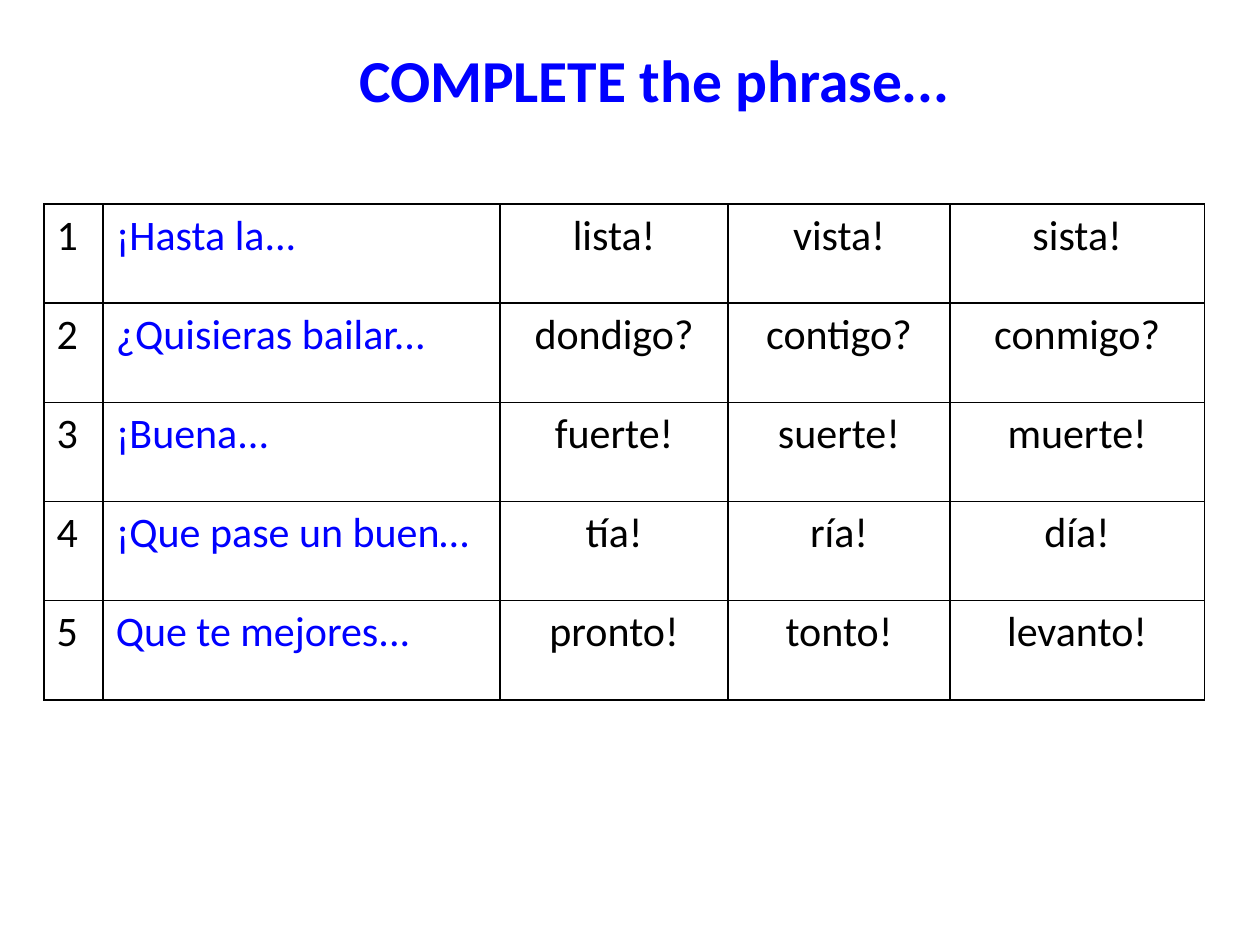
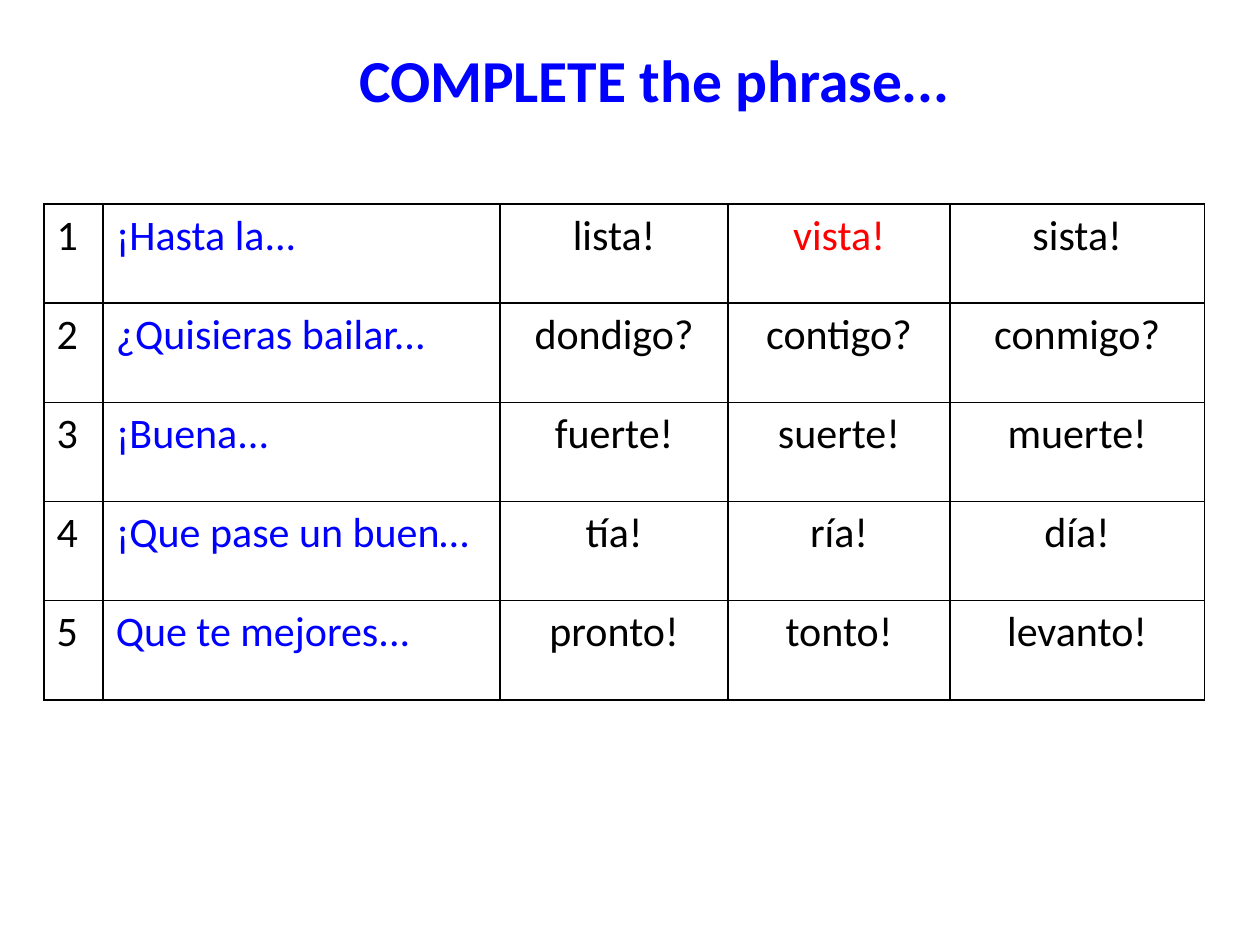
from lxml.etree import SubElement
from pptx import Presentation
from pptx.dml.color import RGBColor
from pptx.enum.text import MSO_ANCHOR, PP_ALIGN
from pptx.oxml.ns import qn
from pptx.util import Cm, Pt

PHRASES = [
    ("¡Hasta la...", "lista!", "vista!", "sista!"),
    ("¿Quisieras bailar...", "dondigo?", "contigo?", "conmigo?"),
    ("¡Buena...", "fuerte!", "suerte!", "muerte!"),
    ("¡Que pase un buen…", "tía!", "ría!", "día!"),
    ("Que te mejores...", "pronto!", "tonto!", "levanto!"),
]
COLUMN_WIDTHS = [1.19, 8, 4.6, 4.47, 5.13]
ROW_HEIGHT = 2


def color(value):
    return RGBColor.from_string(value)


class PhraseDeck:
    font = "Calibri"
    blue, black, red, white = "0000FF", "000000", "FF0000", "FFFFFF"

    def __init__(self):
        self.presentation = Presentation()
        self.presentation.slide_width = Cm(25.4)
        self.presentation.slide_height = Cm(19.05)
        self.slide = None

    def add_slide(self, title):
        layout = self.presentation.slide_layouts.get_by_name("Title Only")
        self.slide = self.presentation.slides.add_slide(layout)
        shape = self.slide.shapes.title
        shape.left, shape.top, shape.width, shape.height = Cm(0.99), Cm(0), Cm(24.41), Cm(3.18)
        shape.text_frame.vertical_anchor = MSO_ANCHOR.MIDDLE
        self.set_text(shape.text_frame, title, 34, self.blue, PP_ALIGN.CENTER, True)

    def set_text(self, text_frame, text, size, text_color, alignment, bold=False):
        text_frame.text = text
        paragraph = text_frame.paragraphs[0]
        paragraph.alignment = alignment
        paragraph.font.name = self.font
        paragraph.font.size = Pt(size)
        paragraph.font.bold = bold
        paragraph.font.color.rgb = color(text_color)

    def add_borders(self, cell):
        properties = cell._tc.get_or_add_tcPr()
        for side in ("lnL", "lnR", "lnT", "lnB"):
            line = SubElement(properties, qn(f"a:{side}"), w=str(Pt(1)))
            fill = SubElement(line, qn("a:solidFill"))
            SubElement(fill, qn("a:srgbClr"), val=self.black)

    def add_phrase_table(self, answers=()):
        frame = self.slide.shapes.add_table(
            len(PHRASES), len(COLUMN_WIDTHS), Cm(0.89), Cm(4.11),
            Cm(sum(COLUMN_WIDTHS)), Cm(ROW_HEIGHT * len(PHRASES)))
        table = frame.table
        table.first_row = table.horz_banding = False
        for column, width in zip(table.columns, COLUMN_WIDTHS):
            column.width = Cm(width)
        for number, phrase in enumerate(PHRASES, 1):
            table.rows[number - 1].height = Cm(ROW_HEIGHT)
            for index, text in enumerate((str(number), *phrase)):
                cell = table.cell(number - 1, index)
                text_color = self.blue if index == 1 else self.red if text in answers else self.black
                alignment = PP_ALIGN.CENTER if index > 1 else PP_ALIGN.LEFT
                self.set_text(cell.text_frame, text, 24, text_color, alignment)
                self.add_borders(cell)
                cell.fill.solid()
                cell.fill.fore_color.rgb = color(self.white)


def main():
    deck = PhraseDeck()
    for answers in ((), ("vista!",)):
        deck.add_slide("COMPLETE the phrase...")
        deck.add_phrase_table(answers)
    deck.presentation.save("out.pptx")


if __name__ == "__main__":
    main()
